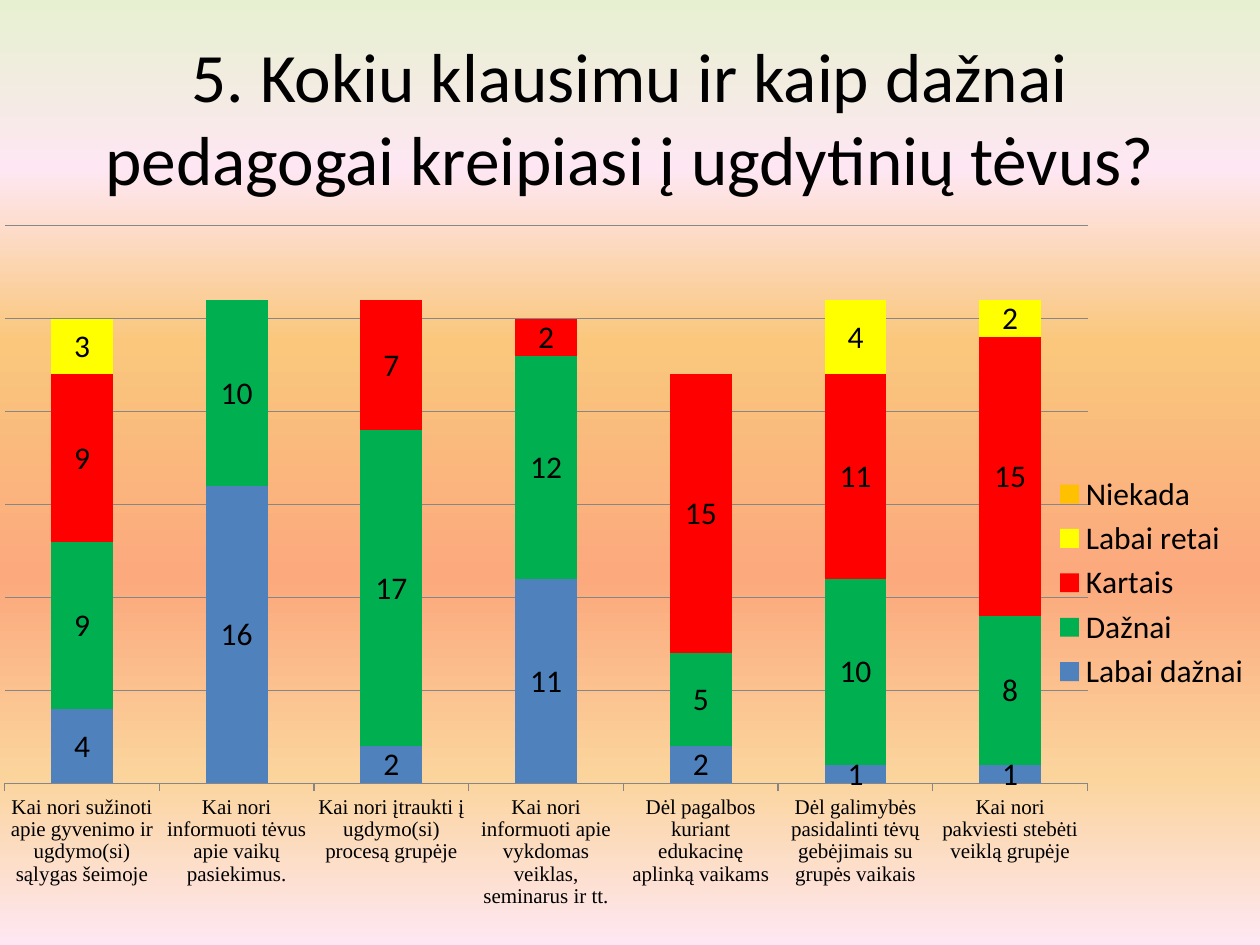
import lxml.etree
import pptx
import pptx.chart.data
import pptx.dml.color
import pptx.enum.chart
import pptx.enum.text
import pptx.oxml
import pptx.oxml.ns
import pptx.util
from dataclasses import dataclass

Cm = pptx.util.Cm
Pt = pptx.util.Pt
qn = pptx.oxml.ns.qn


@dataclass(frozen=True)
class Theme:
    font: str = "Calibri"
    category_font: str = "Times New Roman"
    title_size: float = 39.6
    chart_size: int = 18
    category_size: int = 12
    text: str = "000000"
    grid: str = "868686"
    series: tuple = ("4F81BD", "00B050", "FF0000", "FFFF00", "FFC000")
    background: tuple = (
        (0, "E7F1D1"), (18, "FEE7F2"), (36, "FAC77D"),
        (61, "FBA97D"), (82, "FBD49C"), (100, "FEE7F2"),
    )


TITLE = "5. Kokiu klausimu ir kaip dažnai pedagogai kreipiasi į ugdytinių tėvus?"
CATEGORIES = (
    "Kai nori sužinoti apie gyvenimo ir ugdymo(si) sąlygas šeimoje",
    "Kai nori informuoti tėvus apie vaikų pasiekimus.",
    "Kai nori įtraukti į ugdymo(si) procesą grupėje",
    "Kai nori informuoti apie vykdomas veiklas, seminarus ir tt.",
    "Dėl pagalbos kuriant edukacinę aplinką vaikams",
    "Dėl galimybės pasidalinti tėvų gebėjimais su grupės vaikais",
    "Kai nori pakviesti stebėti veiklą grupėje",
)
ANSWERS = {
    "Labai dažnai": (4, 16, 2, 11, 2, 1, 1),
    "Dažnai": (9, 10, 17, 12, 5, 10, 8),
    "Kartais": (9, None, 7, 2, 15, 11, 15),
    "Labai retai": (3, None, None, None, None, 4, 2),
    "Niekada": (None,) * len(CATEGORIES),
}
PLOT_LAYOUT = {"x": 0, "y": 0.007, "w": 0.86, "h": 0.77}


class SlideBuilder:
    """Draws styled elements on the current slide."""

    def __init__(self, presentation, theme):
        self.theme = theme
        self.slide = presentation.slides.add_slide(presentation.slide_layouts[5])

    def color(self, value):
        return pptx.dml.color.RGBColor.from_string(value)

    def style_font(self, font, name, size):
        font.name = name
        font.size = Pt(size)
        font.color.rgb = self.color(self.theme.text)

    def add_background(self):
        fill = self.slide.background.fill
        fill.gradient()
        fill.gradient_angle = 270
        stops = next(self.slide.element.iter(qn("a:gsLst")))
        for stop in list(stops):
            stops.remove(stop)
        for percent, value in self.theme.background:
            stop = lxml.etree.SubElement(stops, qn("a:gs"), pos=str(percent * 1000))
            lxml.etree.SubElement(stop, qn("a:srgbClr"), val=value)

    def add_title(self, text, left, top, width, height):
        title = self.slide.shapes.title
        title.left, title.top = Cm(left), Cm(top)
        title.width, title.height = Cm(width), Cm(height)
        text_frame = title.text_frame
        text_frame.text = text
        text_frame.word_wrap = True
        text_frame.vertical_anchor = pptx.enum.text.MSO_ANCHOR.MIDDLE
        paragraph = text_frame.paragraphs[0]
        paragraph.alignment = pptx.enum.text.PP_ALIGN.CENTER
        self.style_font(paragraph.runs[0].font, self.theme.font, self.theme.title_size)

    def add_stacked_chart(self, categories, answers, left, top, width, height):
        data = pptx.chart.data.CategoryChartData()
        data.categories = categories
        for name, values in answers.items():
            data.add_series(name, values)
        chart = self.slide.shapes.add_chart(
            pptx.enum.chart.XL_CHART_TYPE.COLUMN_STACKED,
            Cm(left), Cm(top), Cm(width), Cm(height), data,
        ).chart
        chart.has_title = False
        self.style_font(chart.font, self.theme.font, self.theme.chart_size)
        chart.has_legend = True
        chart.legend.position = pptx.enum.chart.XL_LEGEND_POSITION.RIGHT
        chart.legend.include_in_layout = False
        self.format_axes(chart)
        self.format_series(chart.plots[0])
        self.place_plot(chart)

    def format_axes(self, chart):
        value_axis, category_axis = chart.value_axis, chart.category_axis
        value_axis.minimum_scale, value_axis.maximum_scale = 0, 30
        value_axis.major_unit = 5
        value_axis.has_major_gridlines = True
        value_axis.visible = False
        category_axis.major_tick_mark = pptx.enum.chart.XL_TICK_MARK.OUTSIDE
        self.style_font(
            category_axis.tick_labels.font,
            self.theme.category_font, self.theme.category_size,
        )
        for line in (value_axis.major_gridlines.format.line, category_axis.format.line):
            line.color.rgb = self.color(self.theme.grid)
            line.width = Pt(0.75)

    def format_series(self, plot):
        plot.gap_width, plot.overlap = 150, 100
        plot.vary_by_categories = False
        for series, value in zip(plot.series, self.theme.series):
            series.format.fill.solid()
            series.format.fill.fore_color.rgb = self.color(value)
            series.data_labels.show_value = True

    def place_plot(self, chart):
        plot_area = next(chart.element.iter(qn("c:plotArea")))
        for layout in plot_area.findall(qn("c:layout")):
            plot_area.remove(layout)
        layout = lxml.etree.Element(qn("c:layout"))
        plot_area.insert(0, layout)
        manual = lxml.etree.SubElement(layout, qn("c:manualLayout"))
        settings = {"layoutTarget": "inner", "xMode": "edge", "yMode": "edge"}
        for name, value in (settings | PLOT_LAYOUT).items():
            lxml.etree.SubElement(manual, qn(f"c:{name}"), val=str(value))


def main():
    presentation = pptx.Presentation()
    presentation.slide_width, presentation.slide_height = Cm(25.4), Cm(19.05)
    builder = SlideBuilder(presentation, Theme())
    builder.add_background()
    builder.add_title(TITLE, 1.27, 0.76, 22.86, 3.18)
    builder.add_stacked_chart(CATEGORIES, ANSWERS, 0.08, 4.45, 25.4, 14.6)
    presentation.save("out.pptx")


if __name__ == "__main__":
    main()
